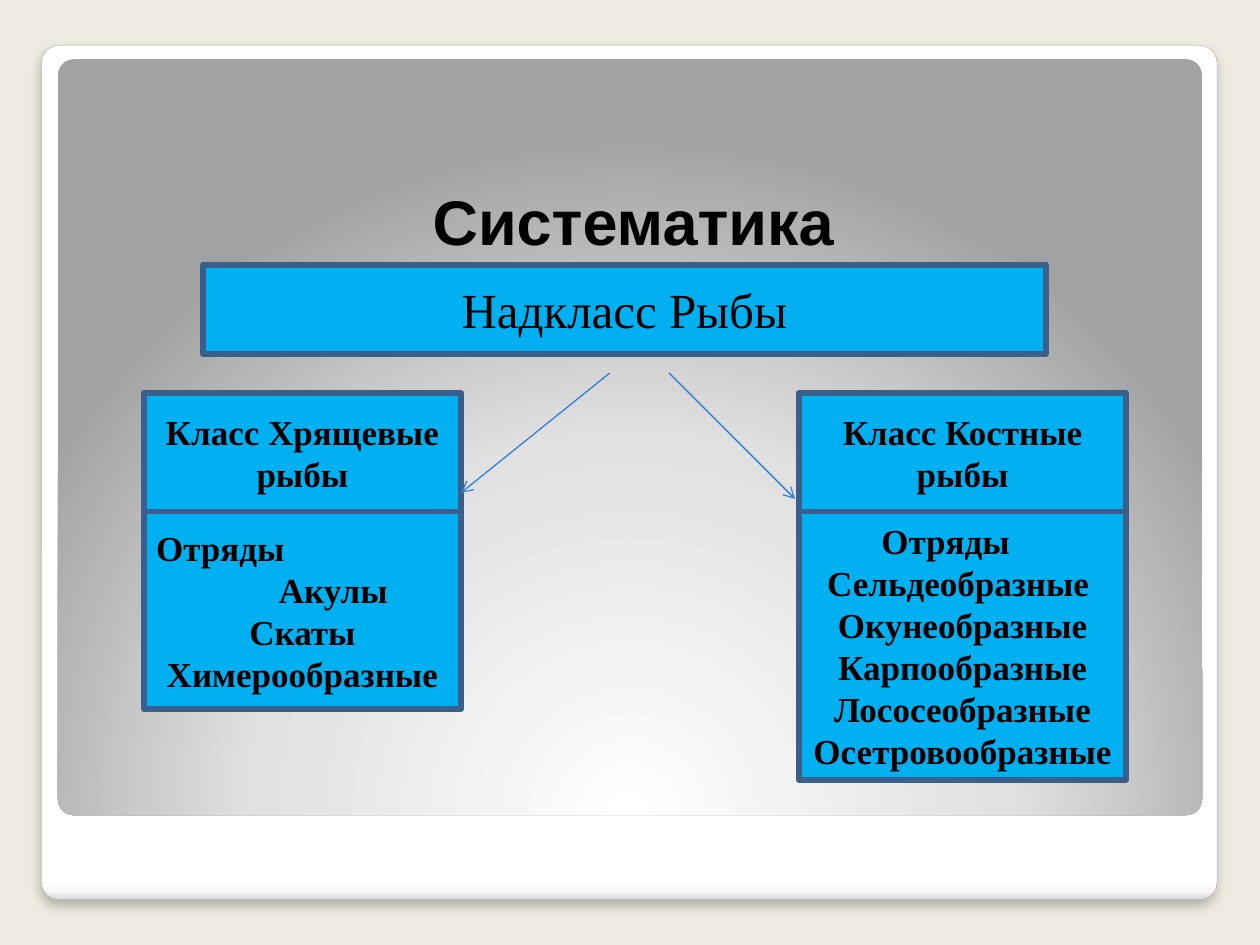
"""Build a slide with the classification of fishes: superclass, two classes and their orders."""
from dataclasses import dataclass

from lxml.etree import SubElement
from pptx import Presentation
from pptx.dml.color import RGBColor
from pptx.enum.shapes import MSO_CONNECTOR as Line, MSO_SHAPE as Shape
from pptx.enum.text import MSO_ANCHOR as Anchor, PP_ALIGN as Align
from pptx.oxml import parse_xml
from pptx.oxml.ns import nsdecls, qn
from pptx.util import Inches, Pt


@dataclass(frozen=True)
class Theme:
    background: str = "EEECE1"
    card_edge: str = "A4A4A4"
    box: str = "00B0F0"
    border: str = "3A5F8C"
    arrow: str = "337ED9"
    text: str = "000000"
    title_font: str = "Arial"
    body_font: str = "Times New Roman"
    title_size: int = 36
    superclass_size: int = 28
    class_size: int = 20


def write_lines(frame, lines, font, size, bold, anchor):
    frame.word_wrap = True
    frame.vertical_anchor = anchor
    for index, (text, align, left, right) in enumerate(lines):
        paragraph = frame.paragraphs[0] if index == 0 else frame.add_paragraph()
        paragraph.alignment = align
        properties = paragraph._p.get_or_add_pPr()
        properties.set("marL", str(Inches(left)))
        properties.set("marR", str(Inches(right)))
        run = paragraph.add_run()
        run.text = text
        run.font.name, run.font.size, run.font.bold = font, Pt(size), bold
        run.font.color.rgb = RGBColor.from_string(theme.text)


def centred(*texts):
    return [(text, Align.CENTER, 0, 0) for text in texts]


theme = Theme()
deck = Presentation()
deck.slide_width, deck.slide_height = Inches(10), Inches(7.5)
slide = deck.slides.add_slide(deck.slide_layouts[6])
slide.background.fill.solid()
slide.background.fill.fore_color.rgb = RGBColor.from_string(theme.background)

card_stops = [(0, "FFFFFF"), (98, "FFFFFF"), (99, "F7F7F7"), (100, "DADADA")]
panel_stops = [(0, "FFFFFF"), (55, "E1E1E1"), (100, "A2A2A2")]
downward = '<a:lin ang="5400000" scaled="0"/>'
from_bottom = '<a:path path="circle"><a:fillToRect l="50000" t="175000" r="50000" b="-75000"/></a:path>'
backdrops = []
for area, stops, direction in [
    ((0.33, 0.36, 9.33, 6.78), card_stops, downward),
    ((0.46, 0.47, 9.08, 6), panel_stops, from_bottom),
]:
    backdrop = slide.shapes.add_shape(Shape.ROUNDED_RECTANGLE, *map(Inches, area))
    backdrop.adjustments[0] = 0.021
    backdrop.shadow.inherit = False
    backdrop.line.fill.background()
    colours = "".join(
        f'<a:gs pos="{place * 1000}"><a:srgbClr val="{colour}"/></a:gs>' for place, colour in stops
    )
    backdrop._element.spPr.find(qn("a:prstGeom")).addnext(parse_xml(
        f'<a:gradFill {nsdecls("a")} rotWithShape="1"><a:gsLst>{colours}</a:gsLst>{direction}</a:gradFill>'
    ))
    backdrops.append(backdrop)

card = backdrops[0]
card.line.color.rgb = RGBColor.from_string(theme.card_edge)
card.line.width = Pt(0.16)
card._element.spPr.find(qn("a:effectLst")).append(parse_xml(
    f'<a:outerShdw {nsdecls("a")} blurRad="{Pt(6)}" dist="{Pt(4)}" dir="5400000" rotWithShape="0">'
    '<a:srgbClr val="000000"><a:alpha val="25000"/></a:srgbClr></a:outerShdw>'
))

title = slide.shapes.add_textbox(Inches(0.55), Inches(1.23), Inches(8.95), Inches(0.87))
write_lines(title.text_frame, centred("Систематика"), theme.title_font, theme.title_size, True, Anchor.BOTTOM)

cartilaginous_orders = [
    ("Отряды", Align.LEFT, 0, 0),
    ("Акулы", Align.CENTER, 0.49, 0),
    *centred("Скаты", "Химерообразные"),
]
bony_orders = [
    ("Отряды", Align.CENTER, 0, 0.27),
    ("Сельдеобразные", Align.CENTER, 0, 0.07),
    *centred("Окунеобразные", "Карпообразные", "Лососеобразные", "Осетровообразные"),
]
for area, lines, size, bold in [
    ((1.61, 2.1, 6.69, 0.71), centred("Надкласс Рыбы"), theme.superclass_size, False),
    ((1.14, 3.12, 2.52, 0.94), centred("Класс Хрящевые рыбы"), theme.class_size, True),
    ((6.34, 3.12, 2.6, 0.94), centred("Класс Костные рыбы"), theme.class_size, True),
    ((1.14, 4.06, 2.52, 1.57), cartilaginous_orders, theme.class_size, True),
    ((6.34, 4.06, 2.6, 2.13), bony_orders, theme.class_size, True),
]:
    group = slide.shapes.add_shape(Shape.RECTANGLE, *map(Inches, area))
    group.shadow.inherit = False
    group.fill.solid()
    group.fill.fore_color.rgb = RGBColor.from_string(theme.box)
    group.line.color.rgb = RGBColor.from_string(theme.border)
    group.line.width = Pt(3.35)
    SubElement(group.line._get_or_add_ln(), qn("a:round"))
    write_lines(group.text_frame, lines, theme.body_font, size, bold, Anchor.MIDDLE)

for ends in [(5.31, 2.96, 6.31, 3.96), (4.84, 2.96, 3.66, 3.91)]:
    branch = slide.shapes.add_connector(Line.STRAIGHT, *map(Inches, ends))
    branch.line.color.rgb = RGBColor.from_string(theme.arrow)
    branch.line.width = Pt(0.75)
    SubElement(branch.line._get_or_add_ln(), qn("a:tailEnd"), type="arrow")
    SubElement(branch._element.spPr, qn("a:effectLst"))

deck.save("out.pptx")
